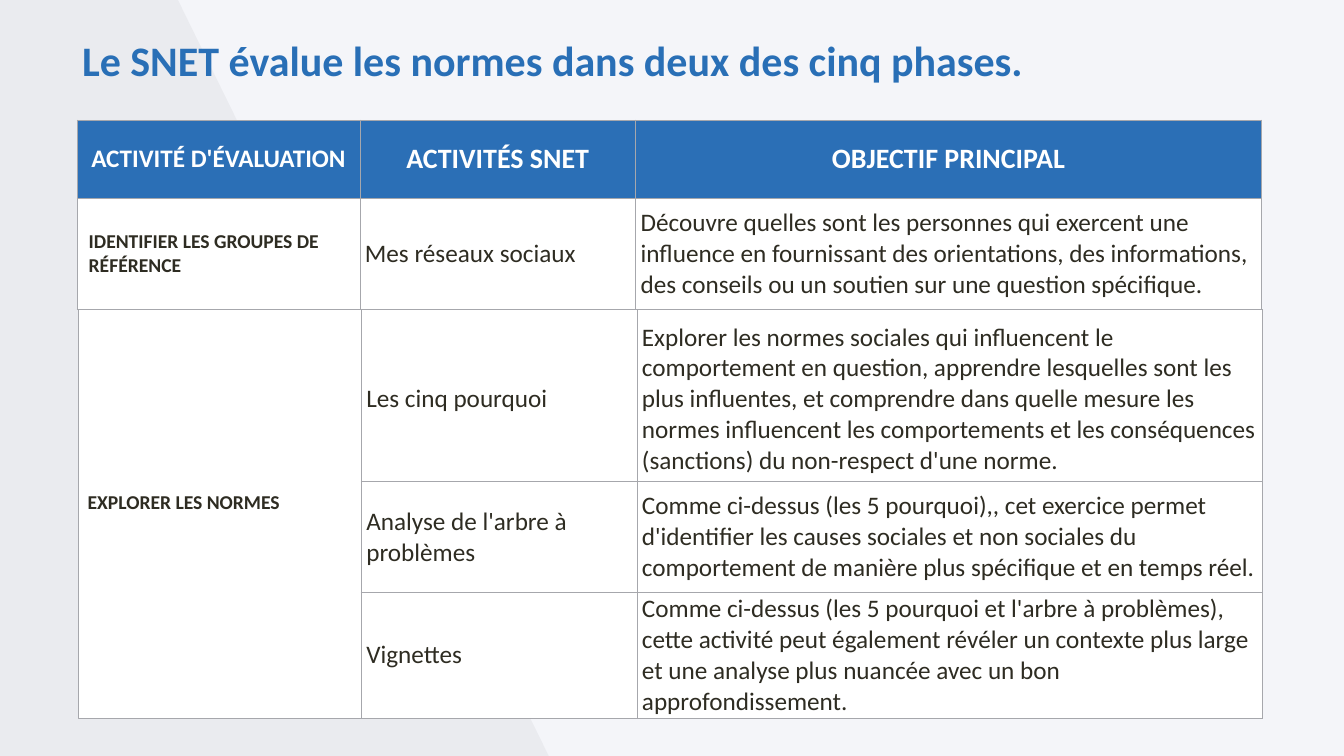
from lxml import etree
from pptx import Presentation
from pptx.dml.color import RGBColor
from pptx.enum.shapes import MSO_SHAPE
from pptx.enum.text import MSO_ANCHOR, MSO_AUTO_SIZE, PP_ALIGN
from pptx.oxml.ns import qn
from pptx.util import Inches, Pt

RECTANGLE = MSO_SHAPE.RECTANGLE
MIDDLE = MSO_ANCHOR.MIDDLE
LEFT, CENTER = PP_ALIGN.LEFT, PP_ALIGN.CENTER
FIT_SHAPE = MSO_AUTO_SIZE.SHAPE_TO_FIT_TEXT

PAPER, WHITE, INK = "F4F5F9", "FFFFFF", "2E2C22"
TITLE_BLUE, HEADER_BLUE = "296FB6", "2B6FB6"
BORDER, WEDGE = "A6A7AC", "393941"

# Shares of the slide, in percent of its width or height
TABLE_LEFT, GROUP_LEFT, ACTIVITY_LEFT = 5.74, 5.85, 26.88
PHASE_WIDTH, ACTIVITY_WIDTH, GOAL_WIDTH = 21.04, 20.51, 46.57
NORMS_TOP, NORMS_HEIGHT = 40.93, 54.07

HEADERS = [("ACTIVITÉ D'ÉVALUATION", 36), ("ACTIVITÉS SNET", 40), ("OBJECTIF PRINCIPAL", 40)]
REFERENCE_ROW = [
    "IDENTIFIER LES GROUPES DE RÉFÉRENCE",
    "Mes réseaux sociaux",
    "Découvre quelles sont les personnes qui exercent une influence en fournissant des "
    "orientations, des informations, des conseils ou un soutien sur une question spécifique.",
]
# top, height, activity, goal
NORM_ROWS = [
    (NORMS_TOP, 23.73, "Les cinq pourquoi",
     "Explorer les normes sociales qui influencent le comportement en question, apprendre "
     "lesquelles sont les plus influentes, et comprendre dans quelle mesure les normes "
     "influencent les comportements et les conséquences (sanctions) du non-respect d'une norme."),
    (63.67, 14.73, "Analyse de l'arbre à problèmes",
     "Comme ci-dessus (les 5 pourquoi),, cet exercice permet d'identifier les causes sociales "
     "et non sociales du comportement de manière plus spécifique et en temps réel."),
    (78.33, 16.67, "Vignettes",
     "Comme ci-dessus (les 5 pourquoi et l'arbre à problèmes), cette activité peut également "
     "révéler un contexte plus large et une analyse plus nuancée avec un bon approfondissement."),
]


def color(hex_code):
    return RGBColor.from_string(hex_code)


class SlideBuilder:
    """Places styled elements by percentages of the slide's size."""

    font = "Calibri"

    def __init__(self, deck):
        self.deck = deck
        self.page = deck.slides.add_slide(deck.slide_layouts[6])
        fill = self.page.background.fill
        fill.solid()
        fill.fore_color.rgb = color(PAPER)

    def across(self, share):
        return round(self.deck.slide_width * share / 100)

    def down(self, share):
        return round(self.deck.slide_height * share / 100)

    def frame(self, left, top, width, height):
        return self.across(left), self.down(top), self.across(width), self.down(height)

    def style_text(self, text_frame, text, size, ink, bold=False, align=LEFT):
        text_frame.text = text
        para = text_frame.paragraphs[0]
        para.alignment = align
        for span in para.runs:
            span.font.name = self.font
            span.font.size = Pt(size)
            span.font.bold = bold
            span.font.color.rgb = color(ink)

    def wedge(self, points, fill, opacity):
        corners = [(self.across(x), self.down(y)) for x, y in points]
        builder = self.page.shapes.build_freeform(*corners[0])
        builder.add_line_segments(corners[1:], close=True)
        shape = builder.convert_to_shape()
        shape.shadow.inherit = False
        shape.line.fill.background()
        shape.fill.solid()
        shape.fill.fore_color.rgb = color(fill)
        tint = next(shape.element.iter(qn("a:srgbClr")))
        etree.SubElement(tint, qn("a:alpha"), val=str(opacity * 1000))

    def text(self, place, text, size, ink, wrap=True):
        box = self.page.shapes.add_textbox(*self.frame(*place))
        box.text_frame.word_wrap = wrap
        box.text_frame.auto_size = FIT_SHAPE
        self.style_text(box.text_frame, text, size, ink, bold=True)
        return box

    def rectangle(self, place, fill, outline):
        shape = self.page.shapes.add_shape(RECTANGLE, *self.frame(*place))
        shape.shadow.inherit = False
        shape.fill.solid()
        shape.fill.fore_color.rgb = color(fill)
        shape.line.color.rgb = color(outline)
        shape.line.width = Pt(1)
        return shape

    def table(self, left, top, widths, heights):
        place = self.frame(left, top, sum(widths), sum(heights))
        table = self.page.shapes.add_table(len(heights), len(widths), *place).table
        table.first_row = table.horz_banding = False
        for column, width in zip(table.columns, widths):
            column.width = self.across(width)
        for row, height in zip(table.rows, heights):
            row.height = self.down(height)
        return table

    def cell(self, cell, text, size=36, ink=INK, fill=WHITE, bold=False, align=LEFT):
        cell.vertical_anchor = MIDDLE
        cell.margin_top = cell.margin_bottom = Inches(0.03)
        self.style_text(cell.text_frame, text, size, ink, bold, align)
        properties = cell._tc.get_or_add_tcPr()
        for side in ("a:lnL", "a:lnR", "a:lnT", "a:lnB"):
            line = etree.SubElement(properties, qn(side), w=str(Pt(1)))
            solid = etree.SubElement(line, qn("a:solidFill"))
            etree.SubElement(solid, qn("a:srgbClr"), val=BORDER)
        cell.fill.solid()
        cell.fill.fore_color.rgb = color(fill)


def main():
    deck = Presentation()
    deck.slide_width, deck.slide_height = Inches(26.67), Inches(15)
    slide = SlideBuilder(deck)

    slide.wedge([(0, 0), (13.24, 0), (40.83, 100), (0, 100)], WEDGE, 5)
    title = slide.text((TABLE_LEFT, 5, 85.9, 6.73),
                       "Le SNET évalue les normes dans deux des cinq phases.", 60, TITLE_BLUE)
    title.text_frame.paragraphs[0].line_spacing = 0.9

    overview = slide.table(TABLE_LEFT, 15.87, [PHASE_WIDTH, ACTIVITY_WIDTH, GOAL_WIDTH],
                           [10.33, 14.73])
    for column, (header, size) in enumerate(HEADERS):
        slide.cell(overview.cell(0, column), header, size, WHITE, HEADER_BLUE, True, CENTER)
    for column, text in enumerate(REFERENCE_ROW):
        is_phase = column == 0
        slide.cell(overview.cell(1, column), text, 28 if is_phase else 36, bold=is_phase)
    overview.cell(1, 0).margin_left = Inches(0.23)

    panel = slide.rectangle((GROUP_LEFT, NORMS_TOP, PHASE_WIDTH, NORMS_HEIGHT), WHITE, BORDER)
    label = slide.text((6.15, 64.53, 19.16, 4.33), "EXPLORER LES NORMES", 28, INK, wrap=False)
    slide.page.shapes.add_group_shape([panel, label])

    for top, height, *texts in NORM_ROWS:
        norms = slide.table(ACTIVITY_LEFT, top, [ACTIVITY_WIDTH, GOAL_WIDTH], [height])
        for column, text in enumerate(texts):
            slide.cell(norms.cell(0, column), text)

    deck.save("out.pptx")


if __name__ == "__main__":
    main()
